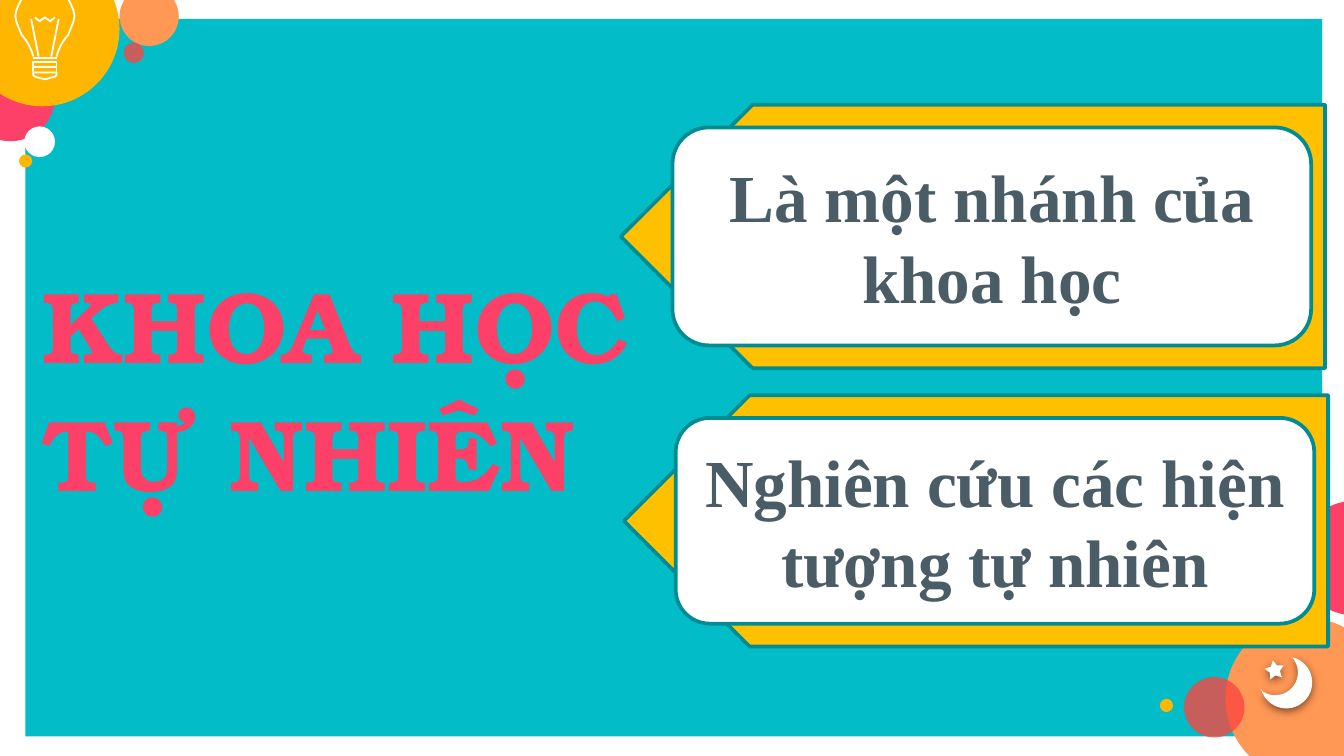
import math

import pptx
import pptx.dml.color
import pptx.enum.shapes
import pptx.enum.text
import pptx.oxml
import pptx.oxml.ns
import pptx.util
from pptx.util import Cm

THEME = {
    "teal": "02BDC7", "pink": "FC4067", "yellow": "FFB600", "orange": "FF9755",
    "red": "FC4540", "white": "FFFFFF", "gold": "FFC000", "edge": "018C93",
    "slate": "4A5C65", "title_font": "TeX Gyre Bonum", "body_font": "Times New Roman",
    "title_size": 54, "body_size": 36, "edge_width": 2, "bulb_width": 0.96,
}
SHAPE = pptx.enum.shapes.MSO_SHAPE
PANEL = (0.48, 0.36, 24.51, 13.56)
CIRCLES = [
    (-0.64, 0.99, 1.68, "pink", 100),
    (-0.66, -0.91, 2.92, "yellow", 100),
    (2.26, -0.25, 1.12, "orange", 100),
    (2.34, 0.81, 0.38, "red", 79),
    (0.46, 2.39, 0.58, "white", 100),
    (23.16, 11.68, 3.05, "orange", 100),
    (24.51, 9.47, 2.16, "pink", 100),
    (22.38, 12.8, 1.14, "red", 79),
    (21.92, 13.21, 0.25, "yellow", 100),
    (0.36, 2.92, 0.25, "yellow", 100),
]
BULB_AXIS = 0.85
BULB_HALVES = [
    ([(0.22, 1.07), (0.25, 0.97), (0.3, 0.86), (0.36, 0.76), (0.44, 0.66),
      (0.5, 0.51), (0.54, 0.41), (0.56, 0.3), (0.54, 0.2), (0.5, 0.1),
      (0.45, 0), (0.35, -0.13), (0.27, -0.18), (0.17, -0.23), (0, -0.25)], False),
    ([(0.19, 0.33), (0.1, 0.4), (0, 0.33)], False),
    ([(0.22, 1.09), (0, 1.09)], False),
    ([(0.22, 1.17), (0.22, 1.27), (0, 1.27)], True),
    ([(0.22, 1.27), (0.22, 1.37), (0, 1.37)], True),
    ([(0.22, 1.37), (0.22, 1.42), (0.19, 1.45), (0, 1.5)], True),
]
FILAMENT = [(0.26, 0.36), (0.2, 0.66), (0.12, 1.07)]
TITLES = [
    ("KHOA HỌC", (0.56, 4.85, 12.17, 2.57)),
    ("TỰ NHIÊN", (0.56, 7.26, 13.03, 2.57)),
]
CALLOUTS = [
    ("Là một nhánh của khoa học", (11.73, 1.98, 13.31, 4.98)),
    ("Nghiên cứu các hiện tượng tự nhiên", (11.79, 7.47, 13.31, 4.75)),
]
CARD_INDENT, CARD_INSET, CARD_WIDTH = 0.98, 0.43, 12.07


def rgb(name):
    """Return the theme colour called name."""
    return pptx.dml.color.RGBColor.from_string(THEME[name])


def paint(s, fill=None, line=None, width=None, alpha=100):
    """Set the fill and outline of a shape and drop its shadow."""
    s.shadow.inherit = False
    if fill:
        s.fill.solid()
        s.fill.fore_color.rgb = rgb(fill)
        if alpha < 100:
            clr = s.fill._xPr.find(".//" + pptx.oxml.ns.qn("a:srgbClr"))
            clr.append(pptx.oxml.parse_xml(
                f'<a:alpha {pptx.oxml.ns.nsdecls("a")} val="{alpha * 1000}"/>'))
    else:
        s.fill.background()
    if line:
        s.line.color.rgb = rgb(line)
        s.line.width = pptx.util.Pt(width)
    else:
        s.line.fill.background()
    return s


def add_preset(shapes, kind, box, **style):
    """Add a preset shape in a box given in centimetres."""
    return paint(shapes.add_shape(kind, *map(Cm, box)), **style)


def add_outline(shapes, points, closed=True, **style):
    """Add a freeform through points given in centimetres."""
    points = [(Cm(x), Cm(y)) for x, y in points]
    builder = shapes.build_freeform(*points[0])
    builder.add_line_segments(points[1:], close=closed)
    return paint(builder.convert_to_shape(), **style)


def write(s, text, font, size, color, align=None, anchor=None):
    """Write one bold paragraph into a shape."""
    tf = s.text_frame
    tf.word_wrap = True
    tf.vertical_anchor = anchor
    p = tf.paragraphs[0]
    p.alignment = align
    r = p.add_run()
    r.text = text
    r.font.name = THEME[font]
    r.font.size = pptx.util.Pt(THEME[size])
    r.font.bold = True
    r.font.color.rgb = rgb(color)


def arc(cx, cy, radius, start, end, steps=30):
    """Return points along an arc between two angles in degrees."""
    angles = [math.radians(start + (end - start) * i / steps) for i in range(steps + 1)]
    return [(cx + radius * math.cos(a), cy + radius * math.sin(a)) for a in angles]


def add_bulb(shapes):
    """Draw the light bulb by mirroring half outlines about its axis."""
    style = {"line": "white", "width": THEME["bulb_width"]}
    for half, closed in BULB_HALVES:
        points = half + [(-x, y) for x, y in reversed(half[:-1])]
        add_outline(shapes, [(BULB_AXIS + x, y) for x, y in points], closed, **style)
    for side in (-1, 1):
        add_outline(shapes, [(BULB_AXIS + side * x, y) for x, y in FILAMENT], False, **style)


def add_night(shapes):
    """Draw the star and the crescent moon with soft shadows."""
    tips = arc(24.09, 12.67, 0.19, -100, 188, 4)
    notches = arc(24.09, 12.67, 0.1, -64, 224, 4)
    star = [point for pair in zip(tips, notches) for point in pair]
    moon = arc(24.31, 12.9, 0.49, -75, 165) + arc(24.1, 12.71, 0.43, 130, -40)
    for points in (star, moon):
        s = add_outline(shapes, points, fill="white")
        s._element.spPr.find(pptx.oxml.ns.qn("a:effectLst")).append(pptx.oxml.parse_xml(
            f'<a:outerShdw {pptx.oxml.ns.nsdecls("a")} blurRad="57150" dist="19050" '
            'dir="5400000" algn="bl" rotWithShape="0"><a:srgbClr val="000000">'
            '<a:alpha val="50000"/></a:srgbClr></a:outerShdw>'))


def add_callout(shapes, text, box):
    """Add a left-pointing plate with a rounded text card on it."""
    edge = {"line": "edge", "width": THEME["edge_width"]}
    x, y, _, h = box
    add_preset(shapes, SHAPE.PENTAGON, box, fill="gold", **edge).rotation = 180
    card = (x + CARD_INDENT, y + CARD_INSET, CARD_WIDTH, h - 2 * CARD_INSET)
    s = add_preset(shapes, SHAPE.ROUNDED_RECTANGLE, card, fill="white", **edge)
    write(s, text, "body_font", "body_size", "slate",
          align=pptx.enum.text.PP_ALIGN.CENTER, anchor=pptx.enum.text.MSO_ANCHOR.MIDDLE)


def main():
    """Build the slide and save it."""
    prs = pptx.Presentation()
    prs.slide_width, prs.slide_height = Cm(25.4), Cm(14.29)
    shapes = prs.slides.add_slide(prs.slide_layouts[6]).shapes
    add_preset(shapes, SHAPE.RECTANGLE, PANEL, fill="teal")
    for x, y, d, color, alpha in CIRCLES:
        add_preset(shapes, SHAPE.OVAL, (x, y, d, d), fill=color, alpha=alpha)
    add_bulb(shapes)
    add_night(shapes)
    for text, box in TITLES:
        s = shapes.add_textbox(*map(Cm, box))
        write(s, text, "title_font", "title_size", "pink")
        s.text_frame.auto_size = pptx.enum.text.MSO_AUTO_SIZE.SHAPE_TO_FIT_TEXT
    for text, box in CALLOUTS:
        add_callout(shapes, text, box)
    prs.save("out.pptx")


if __name__ == "__main__":
    main()
